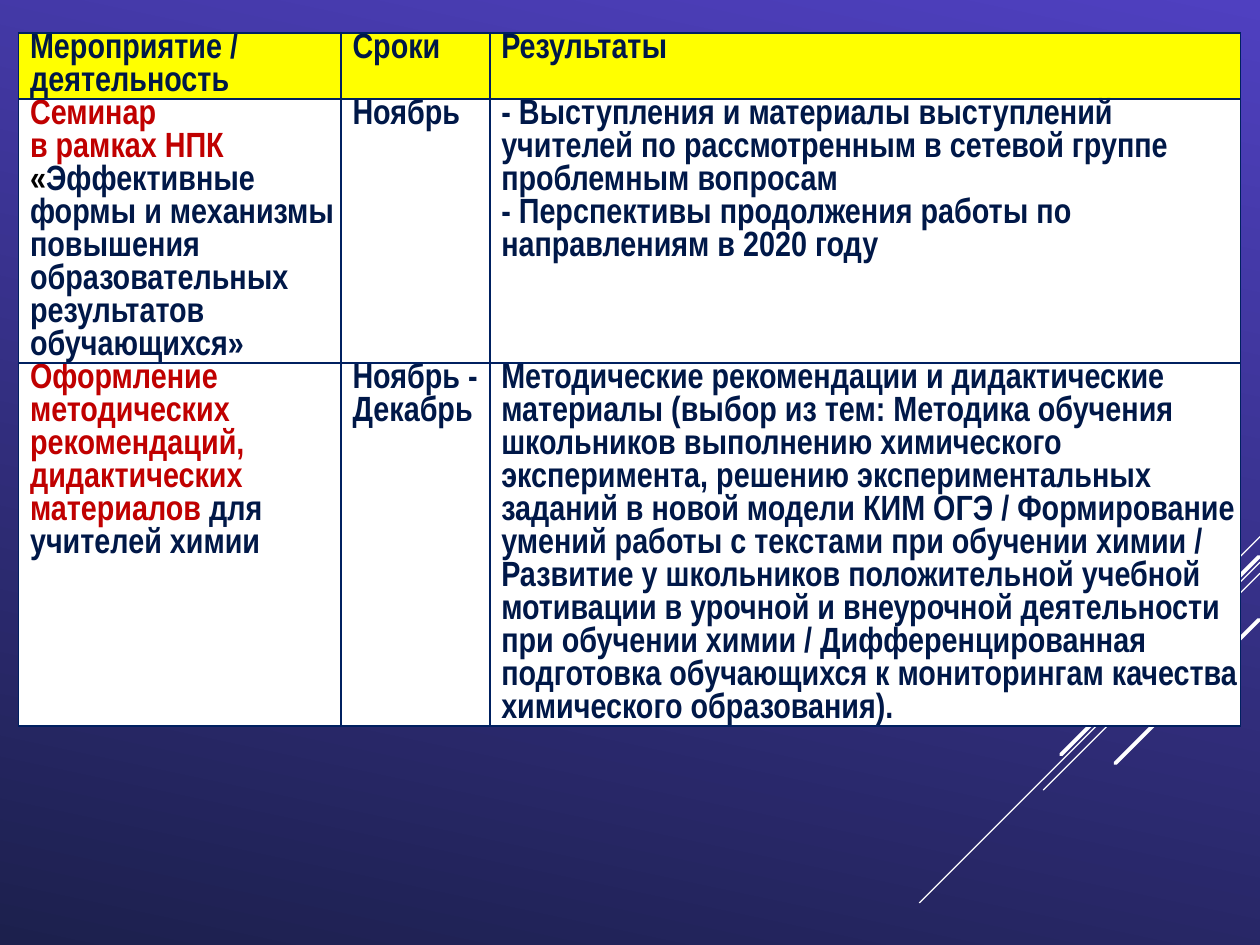
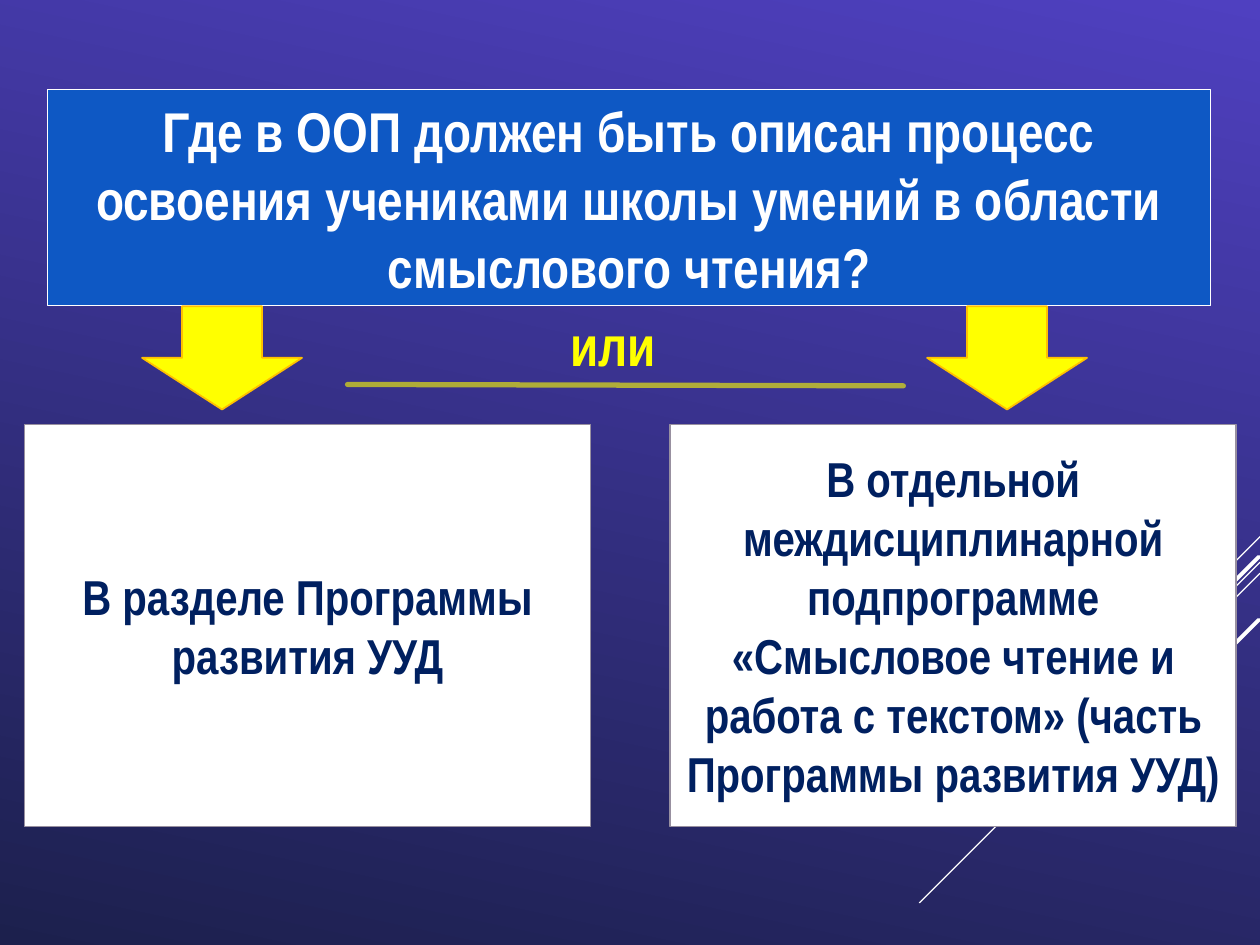
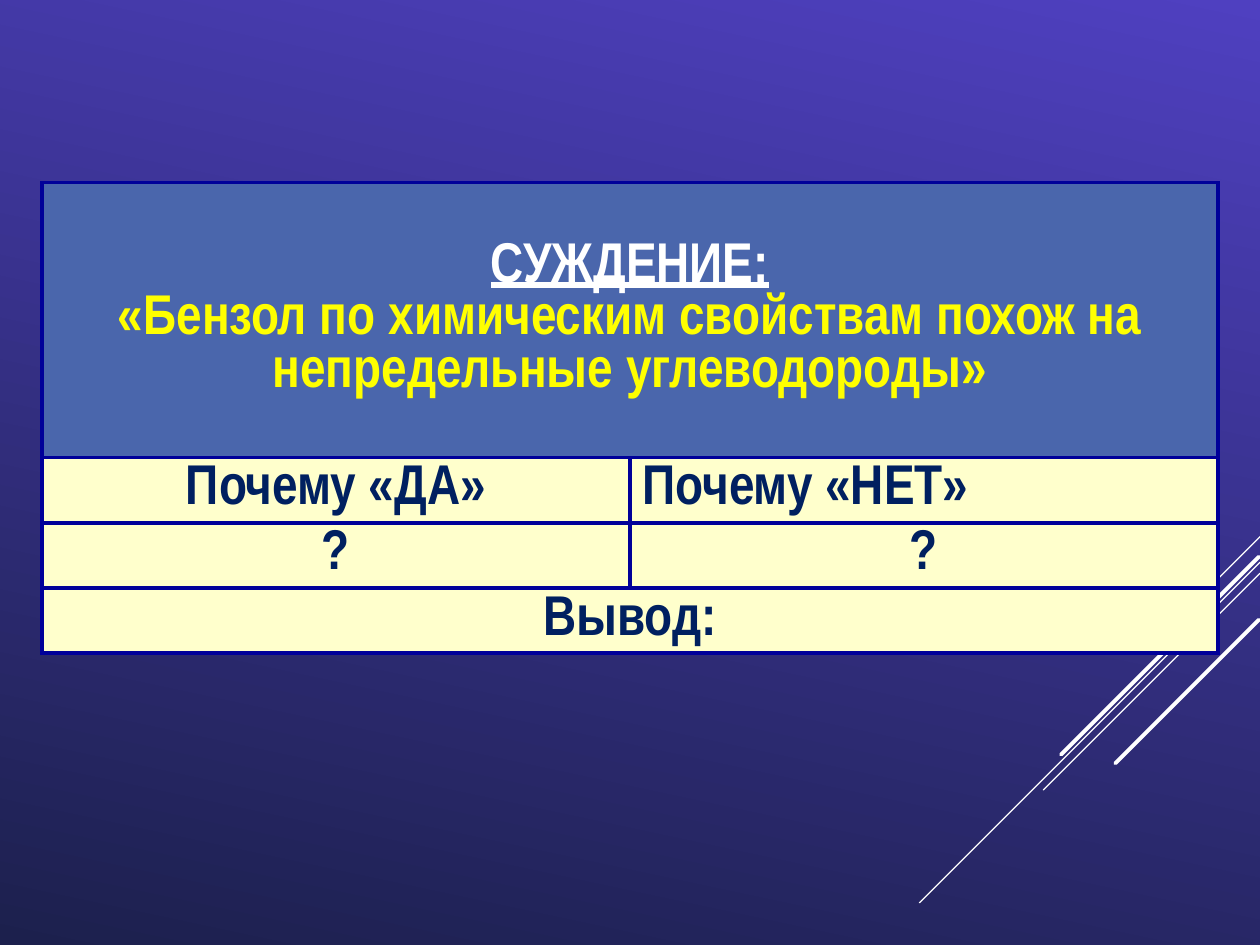
import dataclasses

import pptx
import pptx.dml.color
import pptx.enum.shapes
import pptx.enum.text
import pptx.oxml
import pptx.oxml.ns
import pptx.util

Pt = pptx.util.Pt
SHAPE = pptx.enum.shapes.MSO_SHAPE
ALIGN = pptx.enum.text.PP_ALIGN
ANCHOR = pptx.enum.text.MSO_ANCHOR
AUTO = pptx.enum.text.MSO_AUTO_SIZE


@dataclasses.dataclass(frozen=True)
class Theme:
    font: str = "Arial Narrow"
    # Type sizes and line pitches, in points
    body: int = 20
    card: int = 28
    head: int = 32
    body_pitch: float = 18.86
    card_pitch: float = 33.7
    head_pitch: float = 38.8
    tight_head_pitch: float = 30
    # Colours
    bg_top: str = "4F40C0"
    bg_bottom: str = "1C204D"
    white: str = "FFFFFF"
    black: str = "000000"
    yellow: str = "FFFF00"
    amber: str = "FFC000"
    red: str = "C00000"
    ink: str = "001848"
    navy: str = "002060"
    banner: str = "0E58C4"
    card_edge: str = "9890A0"
    claim: str = "4A66AC"
    cream: str = "FFFFCC"
    grid: str = "000099"


T = Theme()


def rgb(value):
    return pptx.dml.color.RGBColor.from_string(value)


def set_attrs(obj, **values):
    for name, value in values.items():
        setattr(obj, name, value)


def paint(sp, fill, edge, width):
    sp.shadow.inherit = False
    sp.fill.solid()
    sp.fill.fore_color.rgb = rgb(fill)
    sp.line.color.rgb = rgb(edge)
    sp.line.width = Pt(width)


def write(tf, paragraphs, size, pitch, align=ALIGN.CENTER, indent=0):
    """Each paragraph is a list of runs: (text, colour[, extra font values])."""
    for i, runs in enumerate(paragraphs):
        p = tf.add_paragraph() if i else tf.paragraphs[0]
        set_attrs(p, alignment=align, line_spacing=Pt(pitch),
                  space_before=Pt(0), space_after=Pt(0))
        if indent:
            p._p.get_or_add_pPr().set("marL", str(Pt(indent)))
        for text, colour, *extra in runs:
            r = p.add_run()
            r.text = text
            set_attrs(r.font, name=T.font, size=Pt(size), bold=True,
                      **(extra[0] if extra else {}))
            r.font.color.rgb = rgb(colour)


def add_line(slide, x1, y1, x2, y2, colour, width, alpha=None):
    line = slide.shapes.add_connector(
        pptx.enum.shapes.MSO_CONNECTOR.STRAIGHT, Pt(x1), Pt(y1), Pt(x2), Pt(y2))
    line.line.color.rgb = rgb(colour)
    line.line.width = Pt(width)
    ln = line.line._get_or_add_ln()
    ln.set("cap", "rnd")
    if alpha:
        clr = ln.find(".//" + pptx.oxml.ns.qn("a:srgbClr"))
        pptx.oxml.ns.qn("a:alpha")
        clr.append(pptx.oxml.parse_xml(
            f'<a:alpha {pptx.oxml.ns.nsdecls("a")} val="{alpha * 1000}"/>'))
    line.element.spPr.append(pptx.oxml.parse_xml(
        f'<a:effectLst {pptx.oxml.ns.nsdecls("a")}/>'))
    return line


def add_grid(slide, left, top, widths, heights):
    frame = slide.shapes.add_table(len(heights), len(widths), Pt(left), Pt(top),
                                   Pt(sum(widths)), Pt(sum(heights)))
    for col, width in zip(frame.table.columns, widths):
        col.width = Pt(width)
    for row, height in zip(frame.table.rows, heights):
        row.height = Pt(height)
    return frame.table


def style_cell(cell, fill, edge, width):
    cell.fill.solid()
    cell.fill.fore_color.rgb = rgb(fill)
    tcPr = cell._tc.get_or_add_tcPr()
    for i, side in enumerate("LRTB"):
        tcPr.insert(i, pptx.oxml.parse_xml(
            f'<a:ln{side} {pptx.oxml.ns.nsdecls("a")} w="{Pt(width)}"><a:solidFill>'
            f'<a:srgbClr val="{edge}"/></a:solidFill></a:ln{side}>'))


def build_master(prs, slide):
    """Gradient background and diagonal rays shared by all slides."""
    master = prs.slide_master
    fill = master.background.fill
    fill.gradient()
    fill.gradient_angle = 360 - 102
    for stop, colour in zip(fill.gradient_stops, (T.bg_top, T.bg_bottom)):
        stop.color.rgb = rgb(colour)
    # Rays run at 45 degrees: right end, top, run, width
    rays = [(720, 306.7, 59.8, 0.75), (720, 321.3, 194.6, 0.75),
            (720, 327.6, 123.8, 0.75), (719.3, 318.2, 113, 2.25),
            (719.3, 354.2, 82, 2.25)]
    for x, y, run, width in rays:
        line = add_line(slide, x, y, x - run, y + run, T.white, width)
        master.shapes._spTree.append(line.element)


def build_plan(slide):
    """Table of activities, dates and results."""
    rows = [
        [[[("Мероприятие / деятельность", T.ink)]],
         [[("Сроки", T.ink)]],
         [[("Результаты", T.ink)]]],
        [[[("Семинар", T.red)],
          [("в рамках НПК ", T.red), ("«", T.black),
           ("Эффективные формы и механизмы повышения образовательных "
            "результатов обучающихся»", T.ink)]],
         [[("Ноябрь", T.ink)]],
         [[("- Выступления и материалы выступлений учителей по рассмотренным "
            "в сетевой группе проблемным вопросам", T.ink)],
          [("- Перспективы продолжения работы по направлениям в 2020 году", T.ink)]]],
        [[[("Оформление методических рекомендаций, дидактических материалов", T.red),
           (" для учителей химии", T.ink)]],
         [[("Ноябрь - Декабрь", T.ink)]],
         [[("Методические рекомендации и дидактические материалы (выбор из тем: "
            "Методика обучения школьников выполнению химического эксперимента, "
            "решению экспериментальных заданий в новой модели КИМ ОГЭ / "
            "Формирование умений работы с текстами при обучении химии /", T.ink)],
          [("Развитие у школьников положительной учебной мотивации в урочной и "
            "внеурочной деятельности при обучении химии / Дифференцированная "
            "подготовка обучающихся к мониторингам качества химического "
            "образования).", T.ink)]]],
    ]
    line_counts = (2, 8, 11)
    table = add_grid(slide, 10.7, 18.8, (184.3, 85, 429),
                     [n * T.body_pitch for n in line_counts])
    for r, row in enumerate(rows):
        for c, paragraphs in enumerate(row):
            cell = table.cell(r, c)
            set_attrs(cell, margin_left=Pt(0.7), margin_right=Pt(0.7),
                      margin_top=0, margin_bottom=0)
            style_cell(cell, T.white if r else T.yellow, T.navy, 1)
            write(cell.text_frame, paragraphs, T.body, T.body_pitch,
                  ALIGN.LEFT, indent=5.8)


def build_choice(slide):
    """Question with two alternative answers."""
    title = slide.shapes.title
    set_attrs(title, left=Pt(27.2), top=Pt(51.2), width=Pt(664.6), height=Pt(123.6))
    paint(title, T.banner, T.white, 0.75)
    set_attrs(title.text_frame, word_wrap=True, auto_size=AUTO.NONE,
              vertical_anchor=ANCHOR.TOP)
    write(title.text_frame,
          [[("Где в ООП должен быть описан процесс освоения учениками школы "
             "умений в области смыслового чтения?", T.white)]],
          T.head, T.head_pitch)

    # Arrows down to the answers
    for x in (81.2, 529.8):
        sp = slide.shapes.add_shape(SHAPE.DOWN_ARROW, Pt(x), Pt(175), Pt(91.4), Pt(59))
        paint(sp, T.yellow, T.amber, 1)

    # Underlined "or" between the arrows
    add_line(slide, 198.6, 219.7, 516.2, 220.5, T.yellow, 3, alpha=60)
    box = slide.shapes.add_textbox(Pt(319), Pt(173.5), Pt(64), Pt(46))
    box.text_frame.word_wrap = False
    write(box.text_frame, [[("или", T.yellow)]], T.head, T.head_pitch, ALIGN.LEFT)

    # Answer cards
    answers = ("В разделе Программы развития УУД",
               "В отдельной междисциплинарной подпрограмме «Смысловое чтение и "
               "работа с текстом» (часть Программы развития УУД)")
    for i, answer in enumerate(answers):
        sp = slide.shapes.add_shape(SHAPE.RECTANGLE, Pt(14 + i * 369), Pt(242.6),
                                    Pt(323.4), Pt(229.7))
        paint(sp, T.white, T.card_edge, 1)
        set_attrs(sp.text_frame, word_wrap=True, vertical_anchor=ANCHOR.MIDDLE)
        write(sp.text_frame, [[(answer, T.navy)]], T.card, T.card_pitch)


def build_judgement(slide):
    """Statement with arguments for and against."""
    table = add_grid(slide, 24, 104.4, (336, 336), (157.2, 37.2, 37.2, 37.2))
    for r in (0, 3):
        table.cell(r, 0).merge(table.cell(r, 1))
    for r in range(4):
        for c in range(2):
            style_cell(table.cell(r, c), T.cream if r else T.claim, T.grid, 2.25)

    claim = table.cell(0, 0)
    claim.vertical_anchor = ANCHOR.MIDDLE
    write(claim.text_frame,
          [[("СУЖДЕНИЕ:", T.white, {"underline": True})],
           [("«Бензол по химическим свойствам похож на непредельные "
             "углеводороды»", T.yellow)]],
          T.head, T.tight_head_pitch)
    for r, c, text, align in ((1, 0, "Почему «ДА»", ALIGN.CENTER),
                              (1, 1, "Почему «НЕТ»", ALIGN.LEFT),
                              (2, 0, "?", ALIGN.CENTER),
                              (2, 1, "?", ALIGN.CENTER),
                              (3, 0, "Вывод:", ALIGN.CENTER)):
        write(table.cell(r, c).text_frame, [[(text, T.navy)]],
              T.head, T.tight_head_pitch, align)


def main():
    prs = pptx.Presentation()
    prs.slide_width, prs.slide_height = Pt(720), Pt(540)
    title_only, blank = prs.slide_layouts[5], prs.slide_layouts[6]
    plan, choice, judgement = (prs.slides.add_slide(layout)
                               for layout in (blank, title_only, blank))
    build_master(prs, plan)
    build_plan(plan)
    build_choice(choice)
    build_judgement(judgement)
    prs.save("out.pptx")


if __name__ == "__main__":
    main()
